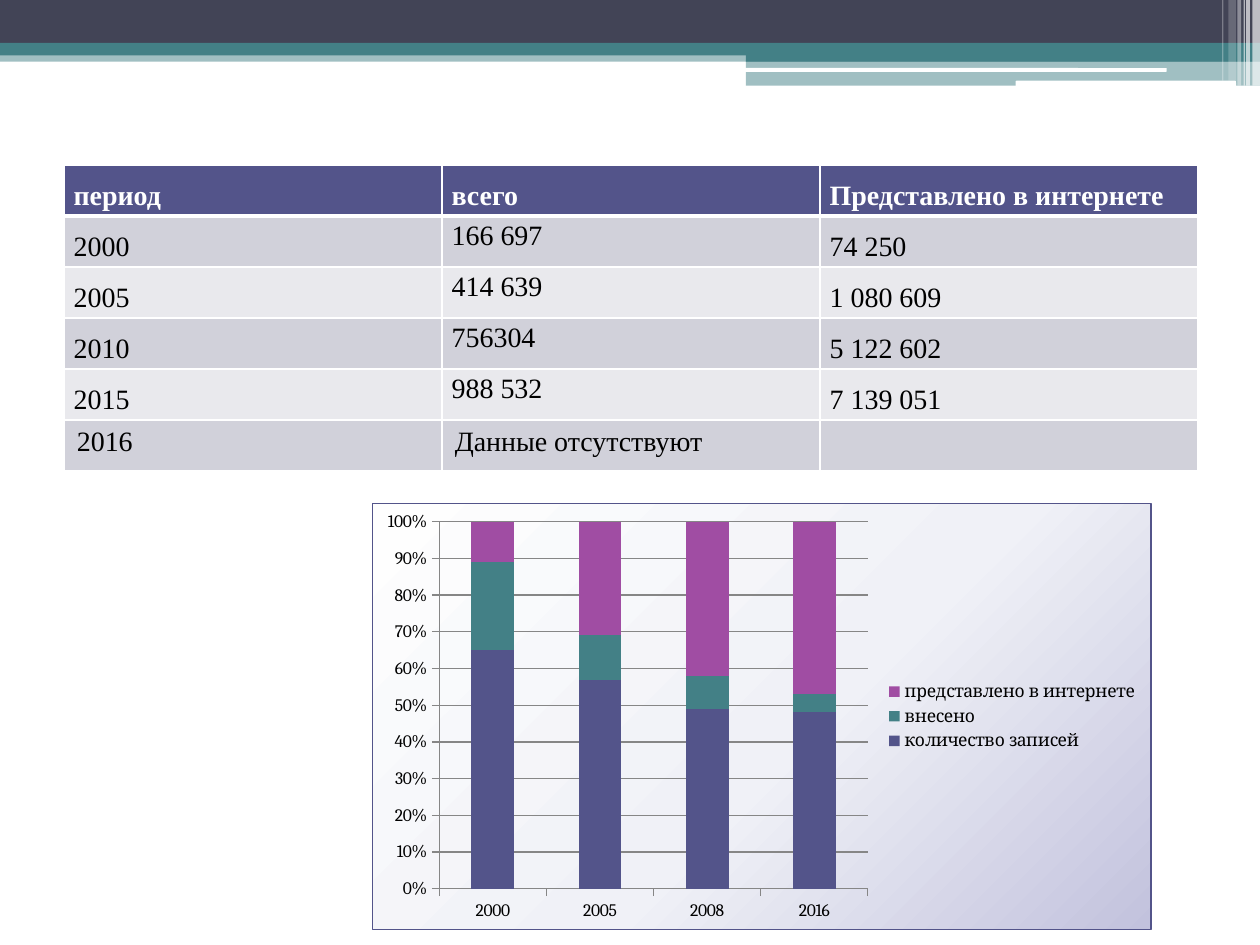
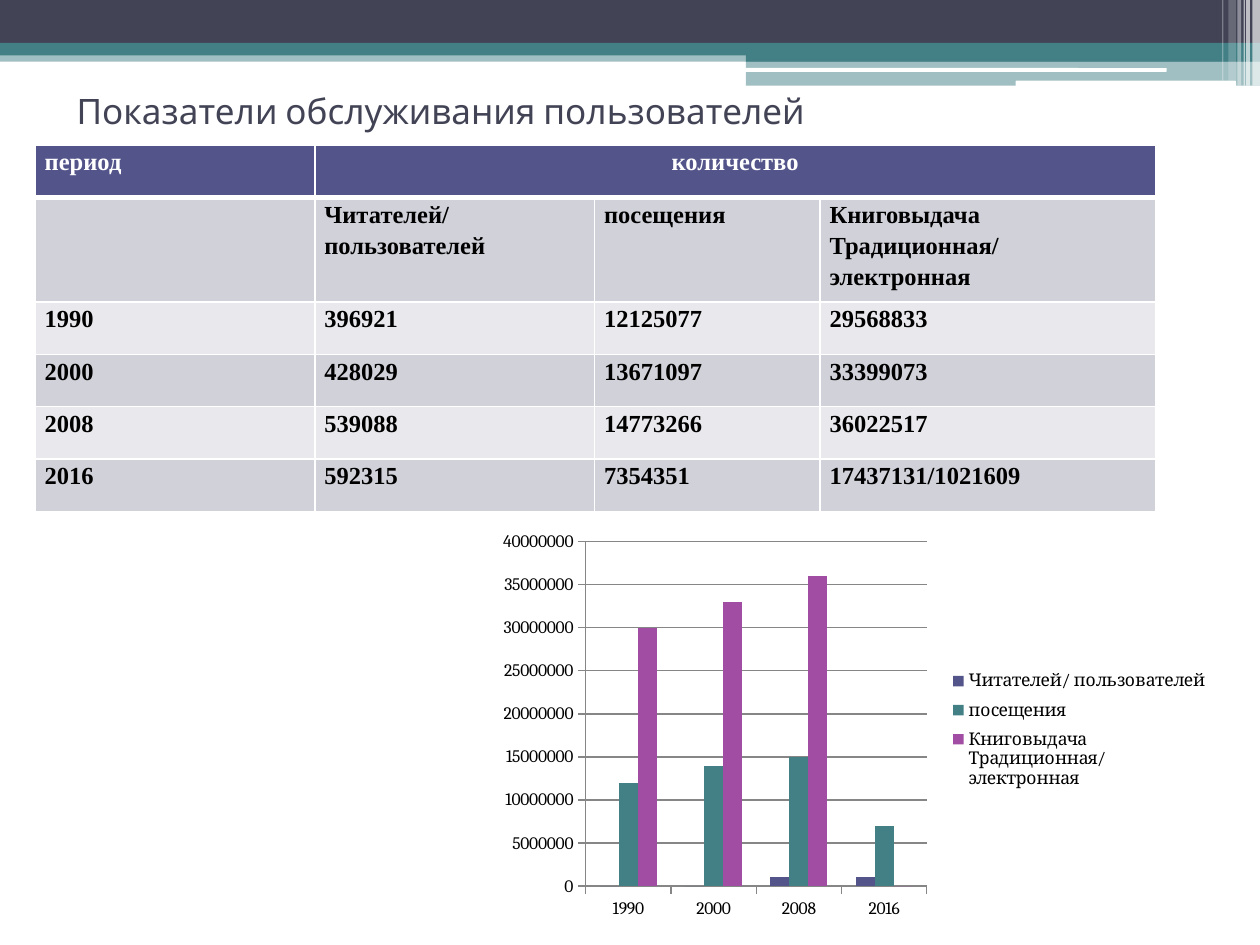
"""Build two slides on library records and reader service, each with a table and a column chart."""
import pptx
import pptx.chart.data
import pptx.dml.color
import pptx.enum.chart
import pptx.enum.shapes
import pptx.enum.text
import pptx.oxml
import pptx.oxml.ns
import pptx.util

WIDTH, HEIGHT = 10, 7.5
DARK, TEAL, INDIGO, PURPLE = "424456", "438086", "53548A", "A04DA3"
WHITE, BLACK, BANDS = "FFFFFF", "000000", ("D1D1DA", "E9E9ED")
SERIES_COLOURS = (INDIGO, TEAL, PURPLE)
HEADING_FONT, TABLE_FONT, CHART_FONT = "Cabin", "Times New Roman", "Cambria"
ALIGN = pptx.enum.text.PP_ALIGN
CHART_TYPE = pptx.enum.chart.XL_CHART_TYPE

BARS = [
    (0, 0.4, WIDTH, 0.09, TEAL, 50),
    (0, 0, WIDTH, 0.34, DARK, 100),
    (0, 0.34, WIDTH, 0.1, TEAL, 100),
    (5.92, 0.39, 4.08, 0.1, TEAL, 100),
    (5.92, 0.48, 4.08, 0.2, TEAL, 50),
]
GROOVES = [(5.91, 0.54, 3.35, 0.03, WHITE, 100), (8.06, 0.64, 1.75, 0.05, WHITE, 100)]
STRIPES = [
    (9.94, 0.06, 0.68, 65),
    (9.89, 0.03, 0.68, 65),
    (9.87, 0.01, 0.68, 60),
    (9.82, 0.03, 0.68, 40),
    (9.75, 0.06, 0.64, 20),
    (9.7, 0.01, 0.64, 30),
]

RECORDS = [
    ("период", "всего", "Представлено в интернете"),
    ("2000", "166 697", "74 250"),
    ("2005", "414 639", "1 080 609"),
    ("2010", "756304", "5 122 602"),
    ("2015", "988 532", "7 139 051"),
    ("2016", "Данные отсутствуют", ""),
]
RECORD_YEARS = ("2000", "2005", "2008", "2016")
RECORD_SHARES = {
    "количество записей": (65, 57, 49, 48),
    "внесено": (24, 12, 9, 5),
    "представлено в интернете": (11, 31, 42, 47),
}

SERVICE_TITLE = "Показатели обслуживания пользователей"
SERVICE = [
    ("период", "количество", "", ""),
    ("", "Читателей/\nпользователей", "посещения", "Книговыдача\nТрадиционная/\nэлектронная"),
    ("1990", "396921", "12125077", "29568833"),
    ("2000", "428029", "13671097", "33399073"),
    ("2008", "539088", "14773266", "36022517"),
    ("2016", "592315", "7354351", "17437131/1021609"),
]
SERVICE_PLOT = (0.13, 0.05, 0.47, 0.86)
SERVICE_LEGEND = (0.63, 0.35, 0.36, 0.34)


def rgb(code):
    return pptx.dml.color.RGBColor.from_string(code)


def inches(*lengths):
    return [pptx.util.Inches(length) for length in lengths]


def style(font, face, size, colour, bold=False):
    font.name, font.size, font.bold = face, pptx.util.Pt(size), bold
    font.color.rgb = rgb(colour)


def drawing_xml(tag, attributes, inner):
    namespaces = pptx.oxml.ns.nsdecls("a", "c")
    return pptx.oxml.parse_xml(f"<{tag} {namespaces} {attributes}>{inner}</{tag}>")


def solid(colour):
    return f'<a:solidFill><a:srgbClr val="{colour}"/></a:solidFill>'


def add_block(slide, left, top, width, height, colour, opacity, rounded=False):
    kinds = pptx.enum.shapes.MSO_SHAPE
    kind = kinds.ROUNDED_RECTANGLE if rounded else kinds.RECTANGLE
    block = slide.shapes.add_shape(kind, *inches(left, top, width, height))
    block.shadow.inherit = False
    block.line.fill.background()
    block.fill.solid()
    block.fill.fore_color.rgb = rgb(colour)
    if opacity < 100:
        tint = block.fill._xPr.find(".//" + pptx.oxml.ns.qn("a:srgbClr"))
        tint.append(drawing_xml("a:alpha", f'val="{opacity * 1000}"', ""))


def add_themed_slide(deck):
    slide = deck.slides.add_slide(deck.slide_layouts[6])
    for bar in BARS:
        add_block(slide, *bar)
    for groove in GROOVES:
        add_block(slide, *groove, rounded=True)
    for left, width, height, opacity in STRIPES:
        add_block(slide, left, 0, width, height, WHITE, opacity)
    return slide


def add_title(slide, wording):
    frame = slide.shapes.add_textbox(*inches(0.51, 0.6, 9, 0.55)).text_frame
    frame.word_wrap = True
    frame.vertical_anchor = pptx.enum.text.MSO_ANCHOR.MIDDLE
    frame.text = wording
    style(frame.paragraphs[0].font, HEADING_FONT, 20, DARK)


def add_borders(cell, row):
    widths = {"L": 1, "R": 1, "T": 3 if row == 1 else 1, "B": 3 if row == 0 else 1}
    properties = cell._tc.get_or_add_tcPr()
    for place, (side, points) in enumerate(widths.items()):
        width = f'w="{pptx.util.Pt(points)}"'
        properties.insert(place, drawing_xml(f"a:ln{side}", width, solid(WHITE)))


def add_grid(slide, rows, place, columns, heights, size, bold, paragraph_rule):
    """Add a banded table; paragraph_rule(row, column) gives alignment and line spacing."""
    grid = slide.shapes.add_table(len(rows), len(columns), *inches(*place)).table
    grid.first_row = grid.horz_banding = False
    for column, width in zip(grid.columns, inches(*columns)):
        column.width = width
    for line, height in zip(grid.rows, inches(*heights)):
        line.height = height
    for r, row in enumerate(rows):
        for c, wording in enumerate(row):
            cell = grid.cell(r, c)
            cell.fill.solid()
            cell.fill.fore_color.rgb = rgb(BANDS[(r - 1) % 2] if r else INDIGO)
            add_borders(cell, r)
            cell.text = wording
            alignment, spacing = paragraph_rule(r, c)
            if spacing:
                cell.margin_left = cell.margin_right = pptx.util.Pt(5.4)
                cell.margin_top = cell.margin_bottom = 0
            for paragraph in cell.text_frame.paragraphs:
                paragraph.alignment, paragraph.line_spacing = alignment, spacing
                style(paragraph.font, TABLE_FONT, size, BLACK if r else WHITE, bold or r == 0)
    return grid


def add_columns(slide, kind, place, categories, series, number_format, overlap):
    figures = pptx.chart.data.CategoryChartData()
    figures.categories = categories
    for name, values in series.items():
        figures.add_series(name, values)
    chart = slide.shapes.add_chart(kind, *inches(*place), figures).chart
    style(chart.font, CHART_FONT, 10, BLACK)
    chart.has_title = False
    chart.has_legend = True
    chart.legend.position = pptx.enum.chart.XL_LEGEND_POSITION.RIGHT
    chart.legend.include_in_layout = False
    plot = chart.plots[0]
    plot.vary_by_categories = False
    plot.gap_width, plot.overlap = 150, overlap
    for colour, bars in zip(SERIES_COLOURS, plot.series):
        bars.format.fill.solid()
        bars.format.fill.fore_color.rgb = rgb(colour)
    values = chart.value_axis
    values.has_major_gridlines = True
    values.tick_labels.number_format = number_format
    values.tick_labels.number_format_is_linked = False
    for line in (values.format.line, values.major_gridlines.format.line,
                 chart.category_axis.format.line):
        line.color.rgb, line.width = rgb("868686"), pptx.util.Pt(0.75)
    for axis in (values, chart.category_axis):
        axis.major_tick_mark = pptx.enum.chart.XL_TICK_MARK.OUTSIDE
    return chart


def add_chart_glow(chart):
    stops = "".join(
        f'<a:gs pos="{share * 1000}"><a:srgbClr val="{colour}"/></a:gs>'
        for share, colour in ((0, "FEFEFE"), (55, "F0F1F7"), (100, "C2C2DD")))
    focus = '<a:fillToRect l="-40000" t="-90000" r="140000" b="190000"/>'
    glow = f'<a:gradFill><a:gsLst>{stops}</a:gsLst><a:path path="circle">{focus}</a:path></a:gradFill>'
    outline = f'<a:ln w="{pptx.util.Pt(0.75)}">{solid(INDIGO)}</a:ln>'
    body = chart.element.find(pptx.oxml.ns.qn("c:chart"))
    body.addnext(drawing_xml("c:spPr", "", glow + outline))


def fix_layout(part, shares, target=""):
    """Place a chart part by its left, top, width and height as shares of the chart."""
    for old in part.findall(pptx.oxml.ns.qn("c:layout")):
        part.remove(old)
    settings = target + '<c:xMode val="edge"/><c:yMode val="edge"/>' + "".join(
        f'<c:{side} val="{share}"/>' for side, share in zip("xywh", shares))
    layout = drawing_xml("c:layout", "", f"<c:manualLayout>{settings}</c:manualLayout>")
    position = part.find(pptx.oxml.ns.qn("c:legendPos"))
    if position is None:
        part.insert(0, layout)
    else:
        position.addnext(layout)


def record_paragraph(row, column):
    if row == len(RECORDS) - 1:
        return None, None
    if row and column == 1:
        return ALIGN.LEFT, 1.15
    return ALIGN.JUSTIFY, 1.5


def service_paragraph(row, column):
    return (ALIGN.CENTER if (row, column) == (0, 1) else ALIGN.JUSTIFY), 1.15


def to_millions(entry):
    return round(int(entry), -6) if entry.isdigit() else 0


def build_records(deck):
    slide = add_themed_slide(deck)
    add_grid(slide, RECORDS, (0.51, 1.31, 9, 2.43), [3] * 3, [2.43 / 6] * 6,
             16, False, record_paragraph)
    chart = add_columns(slide, CHART_TYPE.COLUMN_STACKED_100, (2.95, 3.99, 6.19, 3.39),
                        RECORD_YEARS, RECORD_SHARES, "0%", 100)
    add_chart_glow(chart)


def build_service(deck):
    slide = add_themed_slide(deck)
    add_title(slide, SERVICE_TITLE)
    unit = 2.91 / 7
    grid = add_grid(slide, SERVICE, (0.28, 1.15, 8.9, 2.91), (2.22, 2.22, 1.79, 2.66),
                    [unit, 2 * unit] + [unit] * 4, 14, True, service_paragraph)
    grid.cell(0, 1).merge(grid.cell(0, 3))
    years, *measures = zip(*SERVICE[2:])
    series = {
        name.replace("\n", " "): [to_millions(entry) for entry in entries]
        for name, entries in zip(SERVICE[1][1:], measures)
    }
    chart = add_columns(slide, CHART_TYPE.COLUMN_CLUSTERED, (3.9, 4.14, 5.76, 3.18),
                        years, series, "General", 0)
    plot_area = chart.element.find(".//" + pptx.oxml.ns.qn("c:plotArea"))
    fix_layout(plot_area, SERVICE_PLOT, '<c:layoutTarget val="inner"/>')
    fix_layout(chart.element.find(".//" + pptx.oxml.ns.qn("c:legend")), SERVICE_LEGEND)


def main():
    deck = pptx.Presentation()
    deck.slide_width, deck.slide_height = inches(WIDTH, HEIGHT)
    build_records(deck)
    build_service(deck)
    deck.save("out.pptx")


if __name__ == "__main__":
    main()
